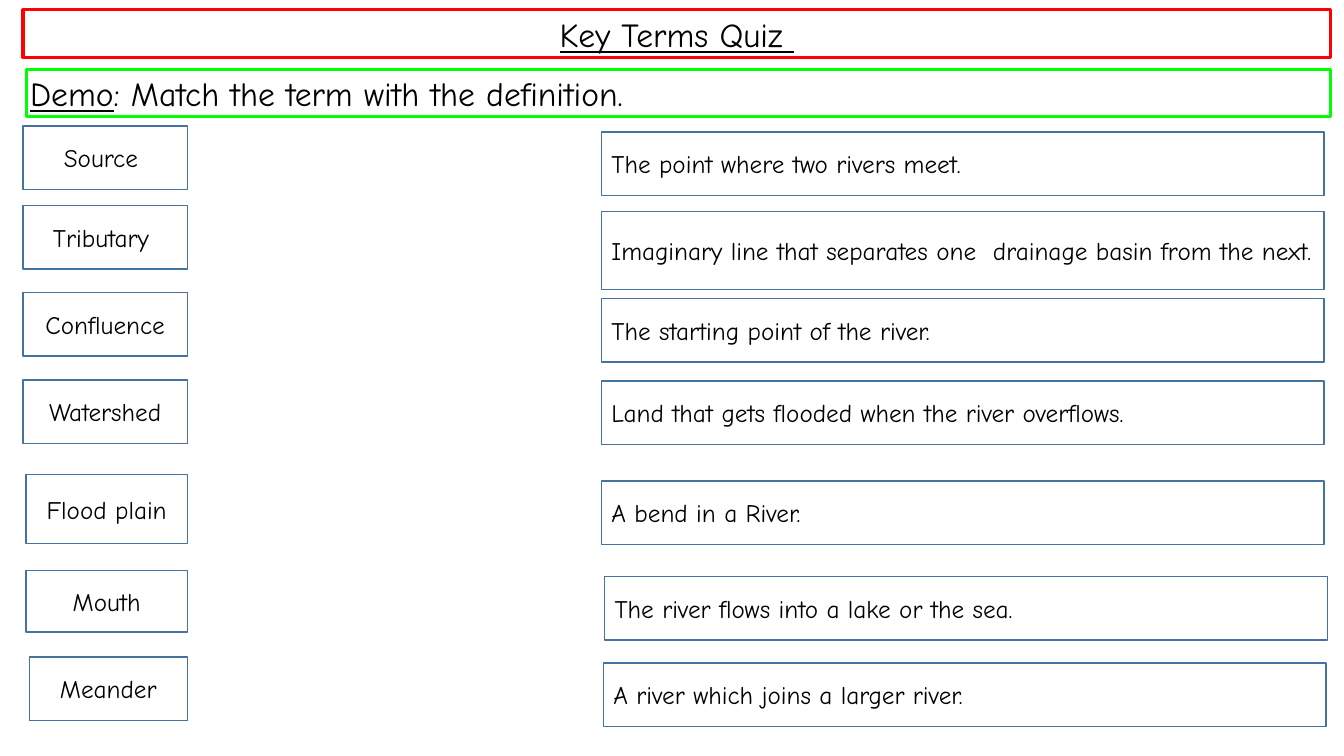
from pptx import Presentation
from pptx import util as u
from pptx.dml.color import RGBColor
from pptx.enum import shapes, text

BLACK = RGBColor(0x00, 0x00, 0x00)
WHITE = RGBColor(0xFF, 0xFF, 0xFF)
BLUE = RGBColor(0x43, 0x73, 0x9E)
RED = RGBColor(0xFF, 0x00, 0x00)
GREEN = RGBColor(0x00, 0xFF, 0x00)

TITLE = [("Key Terms Quiz ", True)]
TASK = [("Demo", True), (": Match the term with the definition.", False)]
TERMS = [
    ("Source ", 0.58, 3.18, 1.6),
    ("Tributary ", 0.58, 5.18, 1.6),
    ("Confluence", 0.58, 7.37, 1.6),
    ("Watershed", 0.58, 9.58, 1.6),
    ("Flood plain", 0.66, 11.96, 1.73),
    ("Mouth", 0.66, 14.38, 1.55),
    ("Meander", 0.74, 16.56, 1.6),
]
DEFINITIONS = [
    ("The point where two rivers meet.", 15.16, 3.33, 1.6),
    ("Imaginary line that separates one  drainage basin from the next.", 15.16, 5.33, 1.96),
    ("The starting point of the river.", 15.16, 7.52, 1.6),
    ("Land that gets flooded when the river overflows.", 15.16, 9.6, 1.6),
    ("A bend in a River.", 15.16, 12.12, 1.6),
    ("The river flows into a lake or the sea.", 15.24, 14.53, 1.6),
    ("A river which joins a larger river.", 15.21, 16.71, 1.6),
]
TERM_RIGHT = 4.72
DEFINITION_WIDTH = 18.21
BANNER_RIGHT = 33.53
BANNER_HEIGHT = 1.19
HANGING = u.Cm(0.66)

BANNER = {"size": 24, "line_width": 2.25, "anchor": text.MSO_ANCHOR.TOP, "margin": 0.1}
CARD = {"size": 18, "line_width": 1, "anchor": text.MSO_ANCHOR.MIDDLE, "margin": None}
CENTER, LEFT = text.PP_ALIGN.CENTER, text.PP_ALIGN.LEFT


def set_all(target, values):
    for name, value in values.items():
        setattr(target, name, value)


def format_box(shape, place, runs, line_color, alignment, style):
    left, top, width, height = (u.Cm(value) for value in place)
    set_all(shape, {"left": left, "top": top, "width": width, "height": height})
    shape.fill.solid()
    shape.fill.fore_color.rgb = WHITE
    shape.line.color.rgb = line_color
    shape.line.width = u.Pt(style["line_width"])
    frame = shape.text_frame
    set_all(frame, {"word_wrap": True, "auto_size": text.MSO_AUTO_SIZE.NONE,
                    "vertical_anchor": style["anchor"]})
    if style["margin"] is not None:
        margin = u.Cm(style["margin"])
        set_all(frame, {f"margin_{side}": margin for side in ("left", "top", "right", "bottom")})
    paragraph = frame.paragraphs[0]
    paragraph.alignment = alignment
    for wording, underline in runs:
        run = paragraph.add_run()
        run.text = wording
        set_all(run.font, {"name": "Comic Neue", "size": u.Pt(style["size"]),
                           "underline": underline})
        run.font.color.rgb = BLACK
    return paragraph


def add_box(slide, *details):
    shape = slide.shapes.add_shape(shapes.MSO_SHAPE.RECTANGLE, 0, 0, 0, 0)
    shape.shadow.inherit = False
    return format_box(shape, *details)


def main():
    presentation = Presentation()
    presentation.slide_width = u.Cm(33.87)
    presentation.slide_height = u.Cm(19.05)
    slide = presentation.slides.add_slide(presentation.slide_layouts[5])

    format_box(slide.shapes.title, (0.58, 0.25, BANNER_RIGHT - 0.58, BANNER_HEIGHT),
               TITLE, RED, CENTER, BANNER)
    add_box(slide, (0.66, 1.75, BANNER_RIGHT - 0.66, BANNER_HEIGHT),
            TASK, GREEN, LEFT, BANNER)

    for term, left, top, height in TERMS:
        add_box(slide, (left, top, TERM_RIGHT - left, height),
                [(term, False)], BLUE, CENTER, CARD)

    for definition, left, top, height in DEFINITIONS:
        paragraph = add_box(slide, (left, top, DEFINITION_WIDTH, height),
                            [(definition, False)], BLUE, LEFT, CARD)
        if height > 1.6:
            properties = paragraph._p.get_or_add_pPr()
            properties.set("marL", str(HANGING))
            properties.set("indent", str(-HANGING))

    presentation.save("out.pptx")


if __name__ == "__main__":
    main()
